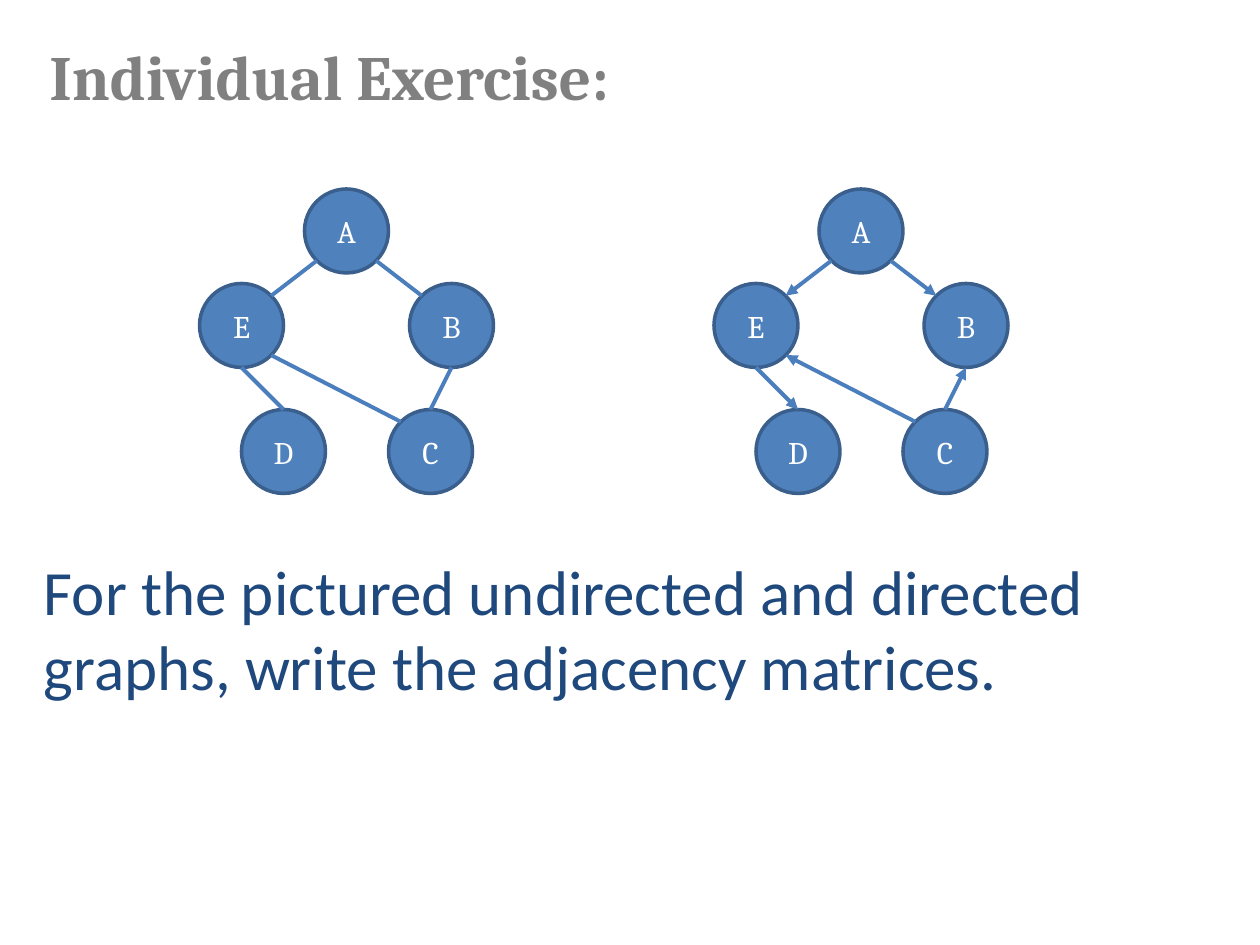
"""Build a slide that asks for the adjacency matrices of two graphs."""
from dataclasses import dataclass
from math import sqrt

from lxml import etree
from pptx import Presentation
from pptx.dml.color import RGBColor
from pptx.enum.shapes import MSO_CONNECTOR, MSO_SHAPE
from pptx.enum.text import MSO_ANCHOR, MSO_AUTO_SIZE, PP_ALIGN
from pptx.oxml.ns import qn
from pptx.util import Pt

STRAIGHT = MSO_CONNECTOR.STRAIGHT
OVAL = MSO_SHAPE.OVAL
TOP, MIDDLE = MSO_ANCHOR.TOP, MSO_ANCHOR.MIDDLE
NO_FIT = MSO_AUTO_SIZE.NONE
LEFT, CENTER = PP_ALIGN.LEFT, PP_ALIGN.CENTER

TITLE_ONLY = 5
TOP_SITE = 0
DIAMETER = 48
DIRECTED_SHIFT = 294
DIAGONAL = sqrt(0.5)
SIDES = {
    "top": (0, -1),
    "bottom": (0, 1),
    "upper left": (-DIAGONAL, -DIAGONAL),
    "upper right": (DIAGONAL, -DIAGONAL),
    "lower left": (-DIAGONAL, DIAGONAL),
    "lower right": (DIAGONAL, DIAGONAL),
}
NODES = {"A": (174, 108), "B": (234, 162), "C": (222, 234), "D": (138, 234), "E": (114, 162)}
EDGES = [
    ("E", "upper right", "A", "lower left"),
    ("B", "upper left", "A", "lower right"),
    ("B", "bottom", "C", "top"),
    ("E", "lower right", "C", "upper left"),
    ("D", "top", "E", "bottom"),
]


@dataclass(frozen=True)
class Theme:
    heading_font: str = "Cambria"
    body_font: str = "Calibri"
    large: int = 36
    label: int = 18
    outline: float = 2
    edge: float = 2.25
    title_color: str = "808080"
    body_color: str = "1F497D"
    node_fill: str = "4F81BD"
    node_line: str = "3A5F8C"
    edge_color: str = "4B7EBC"
    label_color: str = "FFFFFF"


class GraphSlide:
    def __init__(self, page, theme):
        self.page = page
        self.theme = theme

    def set_text(self, box, text, font, size, color, align, anchor, bold=False):
        frame = box.text_frame
        frame.text = text
        frame.vertical_anchor = anchor
        para = frame.paragraphs[0]
        para.alignment = align
        span = para.runs[0]
        span.font.name = font
        span.font.size = Pt(size)
        span.font.bold = bold
        span.font.color.rgb = RGBColor.from_string(color)

    def title(self, text, left, top, width, height):
        theme = self.theme
        box = self.page.shapes.title
        box.left, box.top, box.width, box.height = map(Pt, (left, top, width, height))
        self.set_text(box, text, theme.heading_font, theme.large, theme.title_color, LEFT, TOP, True)
        box.text_frame.word_wrap = False
        box.text_frame.auto_size = NO_FIT

    def body(self, text, left, top, width, height):
        theme = self.theme
        box = self.page.shapes.add_textbox(*map(Pt, (left, top, width, height)))
        self.set_text(box, text, theme.body_font, theme.large, theme.body_color, LEFT, TOP)
        box.text_frame.word_wrap = True

    def node(self, name, left, top):
        theme = self.theme
        circle = self.page.shapes.add_shape(OVAL, *map(Pt, (left, top, DIAMETER, DIAMETER)))
        circle.shadow.inherit = False
        circle.fill.solid()
        circle.fill.fore_color.rgb = RGBColor.from_string(theme.node_fill)
        circle.line.color.rgb = RGBColor.from_string(theme.node_line)
        circle.line.width = Pt(theme.outline)
        self.set_text(circle, name, theme.heading_font, theme.label, theme.label_color, CENTER, MIDDLE)
        return circle

    def rim_point(self, circle, side):
        across, down = SIDES[side]
        radius = DIAMETER / 2
        return (
            circle.left + Pt(radius * (1 + across)),
            circle.top + Pt(radius * (1 + down)),
        )

    def edge(self, start, start_side, end, end_side, directed):
        theme = self.theme
        line = self.page.shapes.add_connector(
            STRAIGHT, *self.rim_point(start, start_side), *self.rim_point(end, end_side)
        )
        if start_side == "top":
            line.begin_connect(start, TOP_SITE)
        if end_side == "top":
            line.end_connect(end, TOP_SITE)
        line.line.color.rgb = RGBColor.from_string(theme.edge_color)
        line.line.width = Pt(theme.edge)
        properties = line._element.spPr
        if directed:
            etree.SubElement(properties.find(qn("a:ln")), qn("a:headEnd"), type="triangle")
        etree.SubElement(properties, qn("a:effectLst"))

    def graph(self, shift, directed):
        circles = {name: self.node(name, left + shift, top) for name, (left, top) in NODES.items()}
        for start, start_side, end, end_side in EDGES:
            self.edge(circles[start], start_side, circles[end], end_side, directed)


def main():
    deck = Presentation()
    deck.slide_width, deck.slide_height = Pt(720), Pt(540)
    page = deck.slides.add_slide(deck.slide_layouts[TITLE_ONLY])
    slide = GraphSlide(page, Theme())
    slide.body(
        "For the pictured undirected and directed graphs, write the adjacency matrices.",
        18, 312, 684, 228,
    )
    slide.title("Individual Exercise:", 21, 18, 531, 50.4)
    slide.graph(0, directed=False)
    slide.graph(DIRECTED_SHIFT, directed=True)
    deck.save("out.pptx")


if __name__ == "__main__":
    main()
